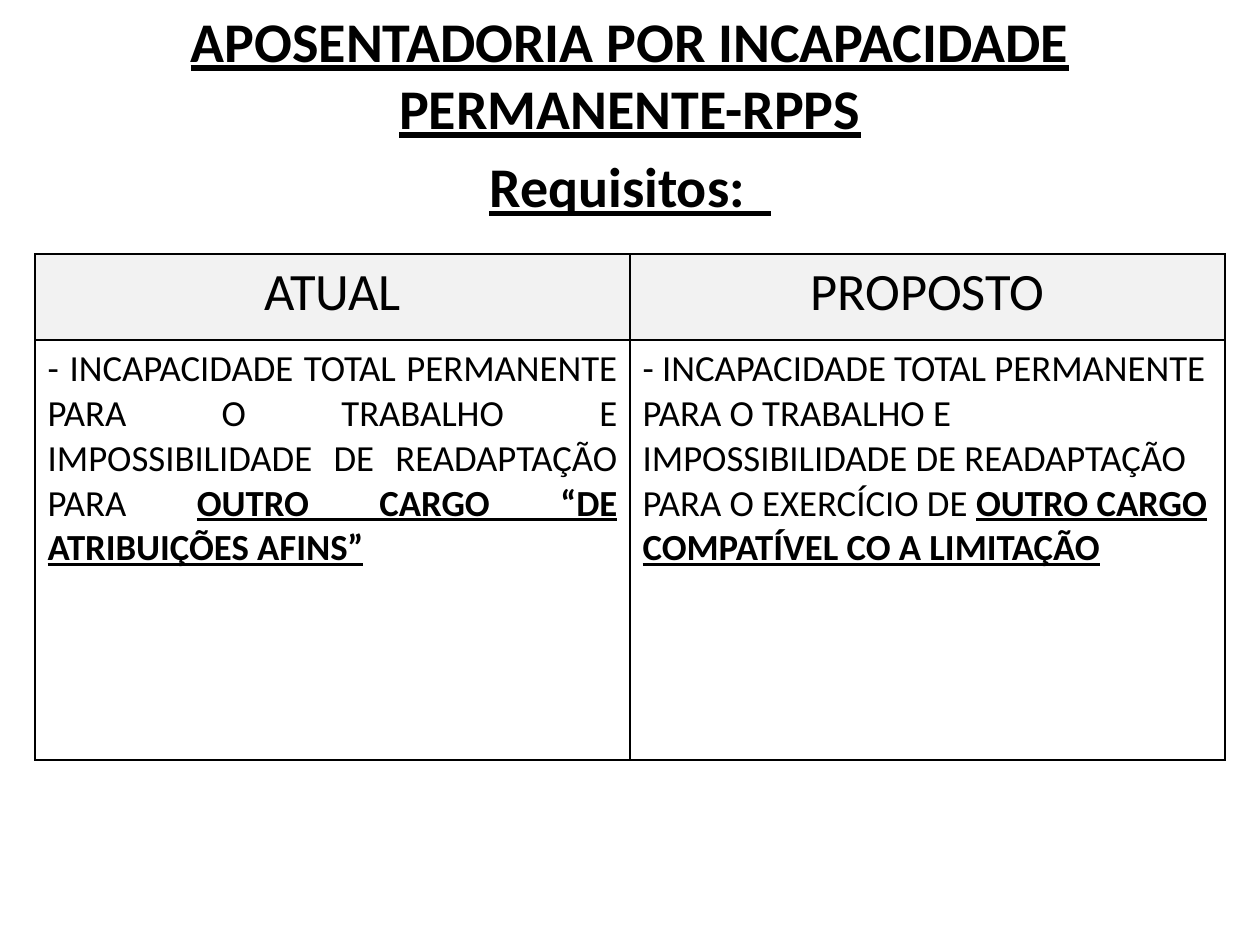
from dataclasses import dataclass

from lxml.etree import SubElement
from pptx import Presentation
from pptx.dml.color import RGBColor
from pptx.enum.text import MSO_ANCHOR, MSO_AUTO_SIZE, PP_ALIGN
from pptx.oxml.ns import qn
from pptx.util import Pt

COLORS = {"text": "000000", "line": "000000", "head": "F2F2F2", "body": "FFFFFF"}
FONT = "Calibri"


@dataclass
class Column:
    head: str
    plain: str
    strong: str
    align: PP_ALIGN


COLUMNS = [
    Column(
        "ATUAL",
        "- INCAPACIDADE TOTAL PERMANENTE PARA O TRABALHO E "
        "IMPOSSIBILIDADE DE READAPTAÇÃO PARA ",
        "OUTRO CARGO “DE ATRIBUIÇÕES AFINS”",
        PP_ALIGN.JUSTIFY,
    ),
    Column(
        "PROPOSTO",
        "- INCAPACIDADE TOTAL PERMANENTE PARA O TRABALHO E "
        "IMPOSSIBILIDADE DE READAPTAÇÃO PARA O EXERCÍCIO DE ",
        "OUTRO CARGO COMPATÍVEL CO A LIMITAÇÃO",
        PP_ALIGN.LEFT,
    ),
]


def write(par, text: str, *, size: float, strong: bool = False,
          align: PP_ALIGN = PP_ALIGN.CENTER, before: float = 0) -> None:
    """Add a run to the paragraph; strong means bold and underlined."""
    par.alignment = align
    par.space_before = Pt(before)
    run = par.add_run()
    run.text = text
    font = run.font
    font.name = FONT
    font.size = Pt(size)
    font.bold = font.underline = strong
    font.color.rgb = RGBColor.from_string(COLORS["text"])


def paint(cell, fill: str) -> None:
    """Give the cell a one-point border on all sides and a solid fill."""
    props = cell._tc.get_or_add_tcPr()
    for side in ("lnL", "lnR", "lnT", "lnB"):
        line = SubElement(props, qn(f"a:{side}"), w=str(Pt(1)))
        solid = SubElement(line, qn("a:solidFill"))
        SubElement(solid, qn("a:srgbClr"), val=COLORS["line"])
    cell.fill.solid()
    cell.fill.fore_color.rgb = RGBColor.from_string(COLORS[fill])


def add_title(slide) -> None:
    title = slide.shapes.title
    title.left, title.top, title.width, title.height = Pt(0), Pt(0), Pt(720), Pt(530.6)
    frame = title.text_frame
    frame.word_wrap = True
    frame.auto_size = MSO_AUTO_SIZE.NONE
    frame.vertical_anchor = MSO_ANCHOR.TOP
    write(frame.paragraphs[0], "APOSENTADORIA POR INCAPACIDADE PERMANENTE-RPPS",
          size=32, strong=True)
    write(frame.add_paragraph(), "Requisitos:  ", size=32, strong=True, before=6.4)


def add_grid(slide) -> None:
    heights = (49, 240)
    frame = slide.shapes.add_table(len(heights), len(COLUMNS), Pt(20), Pt(145.2),
                                   Pt(680), Pt(sum(heights)))
    table = frame.table
    table.first_row = table.horz_banding = False
    for row, height in zip(table.rows, heights):
        row.height = Pt(height)
    for num, col in enumerate(COLUMNS):
        head, body = table.cell(0, num), table.cell(1, num)
        paint(head, "head")
        paint(body, "body")
        write(head.text_frame.paragraphs[0], col.head, size=30)
        par = body.text_frame.paragraphs[0]
        write(par, col.plain, size=21, align=col.align)
        write(par, col.strong, size=21, strong=True, align=col.align)


def main() -> None:
    deck = Presentation()
    deck.slide_width, deck.slide_height = Pt(720), Pt(540)
    slide = deck.slides.add_slide(deck.slide_layouts[5])
    add_title(slide)
    add_grid(slide)
    deck.save("out.pptx")


if __name__ == "__main__":
    main()
